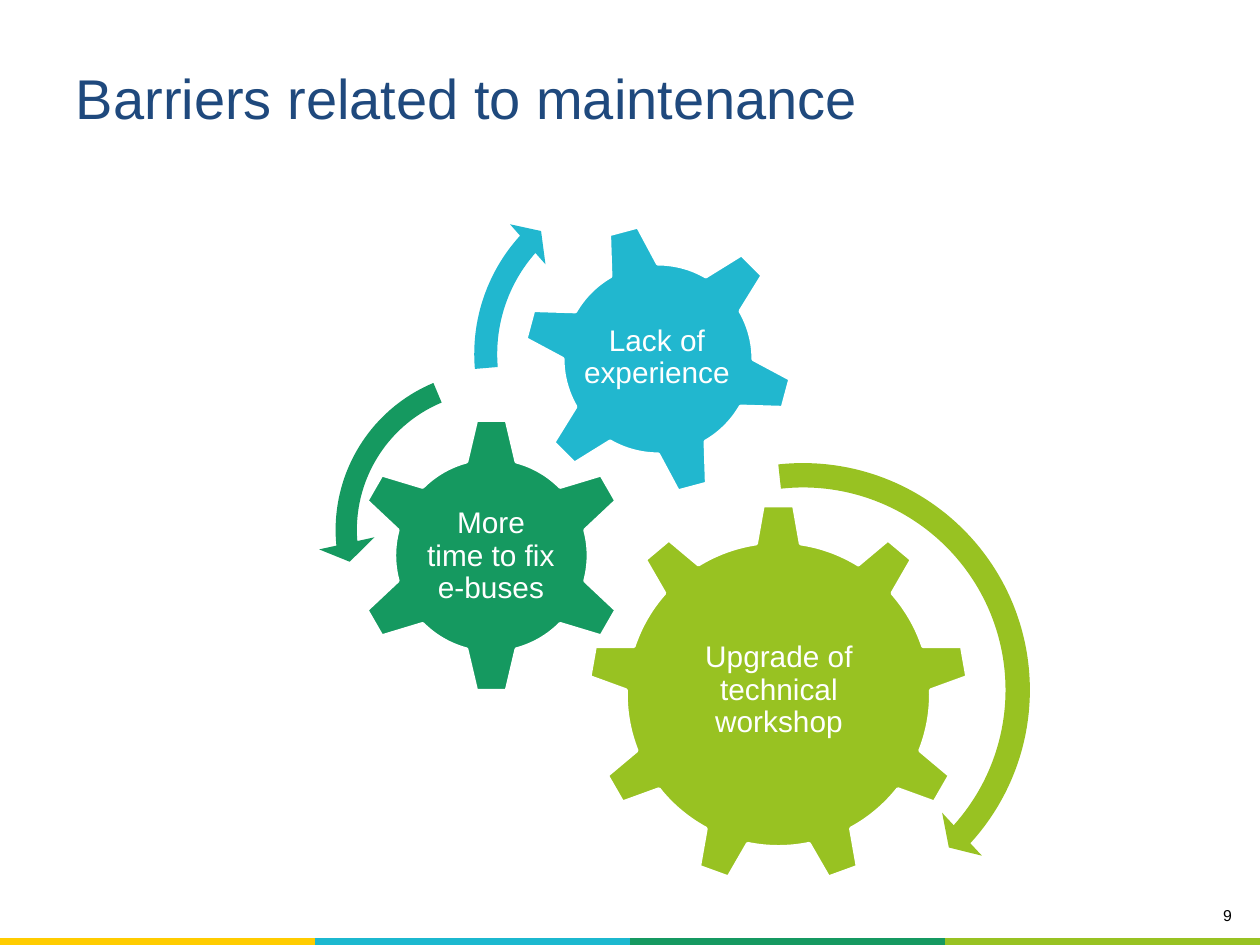
"""Build the slide of three turning gears about maintenance barriers."""
from lxml import etree
from pptx import Presentation
from pptx import util as u
from pptx.dml.color import RGBColor
from pptx.enum import shapes, text

PX = 914400 / 126
KIND = shapes.MSO_SHAPE
ALIGN = text.PP_ALIGN
MID = text.MSO_ANCHOR.MIDDLE
TOP = text.MSO_ANCHOR.TOP
THEME = {
    "font": "Arial", "title": 32, "label": 17, "page": 9,
    "navy": "1F497D", "black": "000000", "white": "FFFFFF",
    "lime": "98C222", "green": "159960", "blue": "21B7CF",
    "bar": ["FFCC00", "1CB8CF", "159961", "98C222"],
}

deck = Presentation()
deck.slide_width, deck.slide_height = u.Inches(10), u.Inches(7.5)
page = deck.slides.add_slide(deck.slide_layouts[6])


def write(box, words, size, color, align, anchor, pad, space=1.0):
    area = page.shapes.add_textbox(*[round(v * PX) for v in box])
    frame = area.text_frame
    frame.word_wrap = True
    frame.vertical_anchor = anchor
    frame.margin_left = frame.margin_right = round(pad[0] * PX)
    frame.margin_top = frame.margin_bottom = round(pad[1] * PX)
    para = frame.paragraphs[0]
    para.alignment = align
    para.line_spacing = space
    run = para.add_run()
    run.text = words
    run.font.name = THEME["font"]
    run.font.size = u.Pt(THEME[size])
    run.font.color.rgb = RGBColor.from_string(THEME[color])


def draw(kind, box, color):
    form = page.shapes.add_shape(kind, *[round(v * PX) for v in box])
    form.shadow.inherit = False
    form.fill.solid()
    form.fill.fore_color.rgb = RGBColor.from_string(THEME[color])
    form.line.fill.background()
    return form


bar = page.shapes.add_table(
    1, 4, 0, round(938 * PX), deck.slide_width, round(21 * PX)).table
for cell, color in zip(bar.rows[0].cells, THEME["bar"]):
    cell.fill.solid()
    cell.fill.fore_color.rgb = RGBColor.from_string(color)
    for side in ("lnL", "lnR", "lnT", "lnB"):
        edge = etree.Element("{http://schemas.openxmlformats.org/drawingml/2006/main}" + side, w="0")
        etree.SubElement(edge, "{http://schemas.openxmlformats.org/drawingml/2006/main}noFill")
        props = cell._tc.get_or_add_tcPr()
        props.insert(len(props) - 1, edge)

write((997, 900, 248, 39), "9", "page", "black", ALIGN.RIGHT, TOP, (13, 6))
write((63, 59, 1134, 77), "Barriers related to maintenance",
      "title", "navy", ALIGN.LEFT, MID, (13, 13))

gears = [
    (KIND.GEAR_9, (588, 504, 381, 381), 0, "lime",
     "Upgrade of technical workshop", (665, 593, 228, 195)),
    (KIND.GEAR_6, (353, 417, 277, 277), 0, "green",
     "More time to fix e-buses", (423, 488, 136, 137)),
    (KIND.GEAR_6, (522, 223, 272, 272), 345, "blue",
     "Lack of experience", (581, 282, 152, 152)),
]
for kind, box, turn, color, words, area in gears:
    gear = draw(kind, box, color)
    gear.rotation = turn
    gear.line.color.rgb = RGBColor.from_string(THEME["white"])
    gear.line.width = u.Pt(2)
    write(area, words, "label", "white", ALIGN.CENTER, MID, (3, 3), 0.9)

arrows = [
    (KIND.CIRCULAR_ARROW, (559, 446, 488, 488), "lime",
     (0.05, 2.99, 25.33, 158.25, 0.06)),
    (KIND.LEFT_CIRCULAR_ARROW, (318, 353, 354, 354), "green",
     (0.06, 4.3, 104.89, 148.38, 0.08)),
    (KIND.CIRCULAR_ARROW, (459, 163, 382, 382), "blue",
     (0.06, 3.94, 133.14, 105.08, 0.07)),
]
for kind, box, color, bends in arrows:
    arrow = draw(kind, box, color)
    for spot, bend in enumerate(bends):
        arrow.adjustments[spot] = bend

deck.save("out.pptx")
